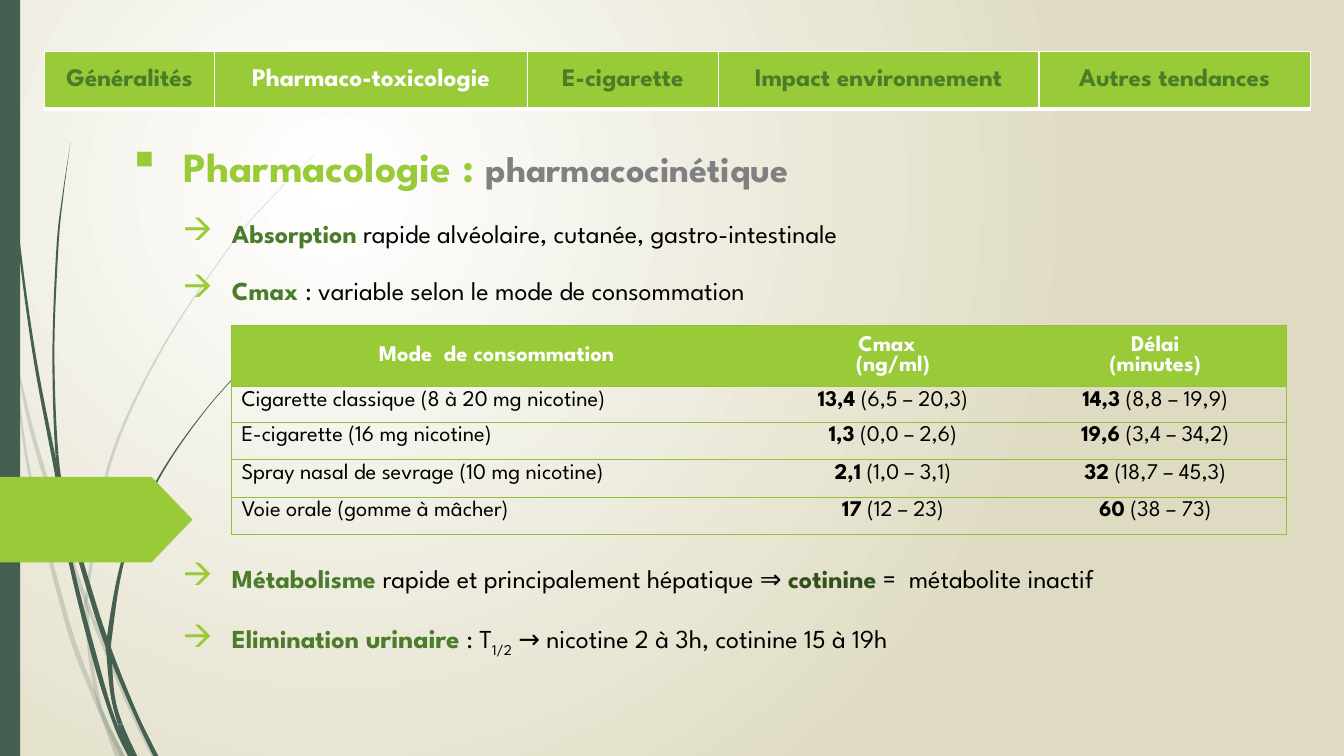
from lxml import etree
from pptx import Presentation
from pptx.dml.color import RGBColor
from pptx.enum.shapes import MSO_SHAPE
from pptx.enum.text import MSO_ANCHOR, PP_ALIGN
from pptx.oxml.ns import qn
from pptx.util import Emu, Inches, Pt

FONT = "League Spartan"
LIME = RGBColor(0x99, 0xCB, 0x38)
RULE = RGBColor(0x92, 0xC2, 0x35)
GREEN = RGBColor(0x4A, 0x7C, 0x29)
FOREST = RGBColor(0x31, 0x52, 0x1C)
SLATE = RGBColor(0x45, 0x5F, 0x51)
GREY = RGBColor(0x80, 0x80, 0x80)
SAND = RGBColor(0xDF, 0xDB, 0xC2)
WHITE = RGBColor(0xFF, 0xFF, 0xFF)
BLACK = RGBColor(0, 0, 0)
RECTANGLE, PENTAGON = MSO_SHAPE.RECTANGLE, MSO_SHAPE.PENTAGON
MIDDLE, TOP = MSO_ANCHOR.MIDDLE, MSO_ANCHOR.TOP
CENTER, LEFT = PP_ALIGN.CENTER, PP_ALIGN.LEFT
WIDTH, HEIGHT = Inches(13.33), Inches(7.5)

# Each stalk: opacity, knots where one blade ends and the next starts, then
# knots given as left edge, right edge and height, in inches.
STALKS = [
    (20, (0, 1, 6, 7), [
        (0, 0, 2.9), (0.11, 0.11, 3.5), (0.16, 0.17, 3.76), (0.28, 0.31, 4.7),
        (0.65, 0.7, 6.2), (0.91, 0.96, 6.9), (1.01, 1.06, 7.14), (1.14, 1.24, 7.5)]),
    (20, (0, 3, 5), [
        (0.14, 0.14, 3.45), (0.29, 0.33, 4.25), (0.58, 0.62, 5.21),
        (0.84, 0.88, 5.98), (1.23, 1.27, 6.93), (1.5, 1.55, 7.5)]),
    (20, (0, 5, 6, 9, 10), [
        (3.12, 3.12, 1.53), (2.68, 2.69, 1.97), (2.28, 2.29, 2.44), (1.58, 1.6, 3.49),
        (1.07, 1.1, 4.61), (0.85, 0.88, 5.88), (0.84, 0.88, 6.05), (0.87, 0.91, 6.46),
        (0.93, 0.97, 6.83), (1.01, 1.05, 7.12), (1.19, 1.24, 7.5)]),
    (None, (0, 4, 7, 8), [
        (0.03, 0.04, 0), (0.07, 0.08, 1.1), (0.17, 0.19, 2.33), (0.33, 0.36, 3.55),
        (0.56, 0.6, 4.79), (0.68, 0.72, 5.57), (0.93, 0.98, 6.58),
        (1.13, 1.17, 7.2), (1.27, 1.36, 7.5)]),
    (None, (0, 4, 5, 7, 9), [
        (0.7, 0.7, 1.41), (0.62, 0.63, 1.93), (0.56, 0.58, 2.45), (0.52, 0.54, 3.49),
        (0.55, 0.58, 4.51), (0.64, 0.68, 5.05), (0.88, 0.93, 5.91),
        (1.06, 1.11, 6.45), (1.32, 1.36, 7.07), (1.52, 1.57, 7.5)]),
    (None, (0, 4, 5, 7, 8), [
        (2.6, 2.61, 3.44), (2.04, 2.05, 4.06), (1.56, 1.58, 4.75), (1.22, 1.25, 5.51),
        (1.06, 1.11, 6.32), (1.06, 1.11, 6.53), (1.1, 1.14, 6.91),
        (1.17, 1.22, 7.19), (1.27, 1.36, 7.5)]),
]
SECTIONS = ["Généralités", "Pharmaco-toxicologie", "E-cigarette",
            "Impact environnement", "Autres tendances"]
CURRENT_SECTION = "Pharmaco-toxicologie"
HEADINGS = ["Mode  de consommation", "Cmax  \n(ng/ml)", "Délai\n(minutes)"]
INTAKES = [
    ("Cigarette classique (8 à 20 mg nicotine)", "13,4", " (6,5 – 20,3)", "14,3", " (8,8 – 19,9)"),
    ("E-cigarette (16 mg nicotine)", "1,3", " (0,0 – 2,6)", "19,6", " (3,4 – 34,2)"),
    ("Spray nasal de sevrage (10 mg nicotine)", "2,1", " (1,0 – 3,1)", "32", " (18,7 – 45,3)"),
    ("Voie orale (gomme à mâcher)", "17", " (12 – 23)", "60", " (38 – 73)"),
]


def across(percent):
    """Return a percentage of the slide's width."""
    return Emu(round(WIDTH * percent / 100))


def down(percent):
    """Return a percentage of the slide's height."""
    return Emu(round(HEIGHT * percent / 100))


def write(paragraph, text, size=18.5, color=BLACK, bold=False, baseline=None):
    """Append one formatted run."""
    run = paragraph.add_run()
    run.text = text
    font = run.font
    font.name, font.size, font.bold = FONT, Pt(size), bold
    font.color.rgb = color
    if baseline:
        run.font._element.set("baseline", str(baseline * 1000))


def paint(shape, color, alpha=None):
    """Give a shape a flat fill without line or shadow."""
    shape.shadow.inherit = False
    shape.fill.solid()
    shape.fill.fore_color.rgb = color
    shape.line.fill.background()
    if alpha:
        tint = next(shape.element.spPr.iter(qn("a:srgbClr")))
        etree.SubElement(tint, qn("a:alpha")).set("val", str(alpha * 1000))


def add_handles(knots):
    """Put two Bézier handles between each pair of knots."""
    padded = [knots[0], *knots, knots[-1]]
    curve = [knots[0]]
    for a, b, c, d in zip(padded, padded[1:], padded[2:], padded[3:]):
        curve.append(tuple(q + (r - p) / 6 for p, q, r in zip(a, b, c)))
        curve.append(tuple(q - (r - p) / 6 for p, q, r in zip(b, c, d)))
        curve.append(c)
    return curve


def add_blade(slide, curve, alpha):
    """Draw one curved outline down the left edge and up the right edge."""
    edge = [(left, y) for left, _, y in curve]
    edge += [(curve[-1][1], curve[-1][2])] * 2
    edge += [(right, y) for _, right, y in reversed(curve)]
    points = [(Inches(x), Inches(y)) for x, y in edge]
    builder = slide.shapes.build_freeform(*points[0], scale=1.0)
    builder.add_line_segments(points[1:], close=True)
    blade = builder.convert_to_shape()
    segments = list(blade.element.iter(qn("a:lnTo")))
    for first, second, third in zip(*[iter(segments)] * 3):
        bend = etree.Element(qn("a:cubicBezTo"))
        first.addprevious(bend)
        for segment in (first, second, third):
            bend.append(segment[0])
            segment.getparent().remove(segment)
    paint(blade, SLATE, alpha)


def add_block(slide, kind, left, top, width, height, color):
    """Draw a flat preset shape."""
    block = slide.shapes.add_shape(kind, across(left), down(top), across(width), down(height))
    paint(block, color)
    return block


def set_background(slide):
    """Fill the background with a circular gradient."""
    fill = slide.background.fill
    fill.gradient()
    for stop, color in zip(fill.gradient_stops, (WHITE, SAND)):
        stop.color.rgb = color
    linear = next(slide.element.iter(qn("a:lin")))
    circle = etree.Element(qn("a:path"), path="circle")
    etree.SubElement(circle, qn("a:fillToRect"), l="50000", t="50000", r="100000", b="100000")
    linear.getparent().replace(linear, circle)


def add_grid(slide, left, top, columns, rows):
    """Add a plain table with the given column and row shares."""
    table = slide.shapes.add_table(len(rows), len(columns), across(left), down(top),
                                   across(sum(columns)), down(sum(rows))).table
    table.first_row = table.horz_banding = False
    for column, share in zip(table.columns, columns):
        column.width = across(share)
    for row, share in zip(table.rows, rows):
        row.height = down(share)
    return table


def set_cell(cell, lines, borders, fill=None, align=CENTER, anchor=MIDDLE):
    """Fill a cell with lines of runs, its borders and its colour."""
    properties = cell._tc.get_or_add_tcPr()
    for side in "LRTB":
        color, points = borders.get(side, (None, 0))
        line = etree.SubElement(properties, qn("a:ln" + side), w=str(Pt(points)))
        if color is None:
            etree.SubElement(line, qn("a:noFill"))
        else:
            solid = etree.SubElement(line, qn("a:solidFill"))
            etree.SubElement(solid, qn("a:srgbClr"), val=str(color))
    if fill is None:
        cell.fill.background()
    else:
        cell.fill.solid()
        cell.fill.fore_color.rgb = fill
    cell.vertical_anchor = anchor
    cell.margin_top = cell.margin_bottom = Inches(0.04)
    for index, runs in enumerate(lines):
        frame = cell.text_frame
        paragraph = frame.add_paragraph() if index else frame.paragraphs[0]
        paragraph.alignment = align
        for text, style in runs:
            write(paragraph, text, **style)


def add_sections(slide):
    """Add the navigation strip."""
    strip = add_grid(slide, 3.3, 6.8, [12.68, 23.27, 14.19, 23.87, 20.2], [7.6])
    borders = {side: (WHITE, 1) for side in "LRT"} | {"B": (WHITE, 3)}
    for cell, name in zip(strip.rows[0].cells, SECTIONS):
        color = WHITE if name == CURRENT_SECTION else GREEN
        set_cell(cell, [[(name, dict(size=18, color=color, bold=True))]], borders, LIME)


def add_intakes(slide):
    """Add the table of nicotine peaks by mode of intake."""
    table = add_grid(slide, 17.22, 43, [39.46, 19.52, 19.52], [8, 4.67, 4.97, 4.97, 4.97])
    edge = (RULE, 0.75)
    sides = [dict.fromkeys(names, edge) for names in ("LTB", "TB", "RTB")]
    head = dict(size=16, color=WHITE, bold=True)
    plain, strong = dict(size=16), dict(size=16, bold=True)
    for cell, text, borders in zip(table.rows[0].cells, HEADINGS, sides):
        set_cell(cell, [[(line, head)] for line in text.split("\n")], borders, LIME)
    for row, (mode, peak, peak_range, delay, delay_range) in enumerate(INTAKES, 1):
        set_cell(table.cell(row, 0), [[(mode, plain)]], sides[0], align=LEFT, anchor=TOP)
        for column, value, spread in ((1, peak, peak_range), (2, delay, delay_range)):
            set_cell(table.cell(row, column), [[(value, strong), (spread, plain)]],
                     sides[column], anchor=TOP)


def add_point(paragraph, bullet, indent, hanging, before, runs):
    """Write one paragraph with a Wingdings bullet."""
    properties = paragraph._p.get_or_add_pPr()
    properties.set("marL", str(Inches(indent)))
    properties.set("indent", str(-Inches(hanging)))
    color = etree.SubElement(properties, qn("a:buClr"))
    etree.SubElement(color, qn("a:srgbClr"), val=str(LIME))
    etree.SubElement(properties, qn("a:buSzPct"), val="120000")
    etree.SubElement(properties, qn("a:buFont"), typeface="Wingdings", charset="2")
    etree.SubElement(properties, qn("a:buChar"), char=bullet)
    paragraph.line_spacing = 1.4
    paragraph.space_before = Pt(before)
    for text, style in runs:
        write(paragraph, text, **style)


def add_points(slide):
    """Add the heading and the four pharmacokinetic points."""
    frame = slide.shapes.add_textbox(across(9.17), down(15.4), across(88.37), down(75.87)).text_frame
    frame.word_wrap = True
    key = dict(color=GREEN, bold=True)
    add_point(frame.paragraphs[0], "§", 0.5, 0.5, 0, [
        ("Pharmacologie : ", dict(size=29.6, color=LIME, bold=True)),
        ("pharmacocinétique", dict(size=25.9, color=GREY, bold=True))])
    points = [
        (10, [("Absorption", key), (" rapide alvéolaire, cutanée, gastro-intestinale", {})]),
        (10, [("Cmax ", key), (": variable selon le mode de consommation", {})]),
        (174, [("Métabolisme ", key), ("rapide et principalement hépatique ⇒ ", {}),
               ("cotinine", dict(color=FOREST, bold=True)), (" =  métabolite inactif", {})]),
        (10, [("Elimination ", key), ("urinaire", dict(size=19.4, **key)), (" : T", {}),
              ("1/2", dict(baseline=-25)), (" → nicotine 2 à 3h, cotinine 15 à 19h", {})]),
    ]
    for before, runs in points:
        add_point(frame.add_paragraph(), "à", 0.98, 0.49, before, runs)


def main():
    """Build and save the slide."""
    deck = Presentation()
    deck.slide_width, deck.slide_height = WIDTH, HEIGHT
    slide = deck.slides.add_slide(deck.slide_layouts[6])
    set_background(slide)
    for alpha, cuts, knots in STALKS:
        curve = add_handles(knots)
        for start, end in zip(cuts, cuts[1:]):
            add_blade(slide, curve[3 * start:3 * end + 1], alpha)
    add_block(slide, RECTANGLE, 0, 0, 1.5, 100, SLATE)
    marker = add_block(slide, PENTAGON, 0, 63.07, 14.33, 11.33, LIME)
    marker.adjustments[0] = 0.48
    add_points(slide)
    add_sections(slide)
    add_intakes(slide)
    deck.save("out.pptx")


if __name__ == "__main__":
    main()
